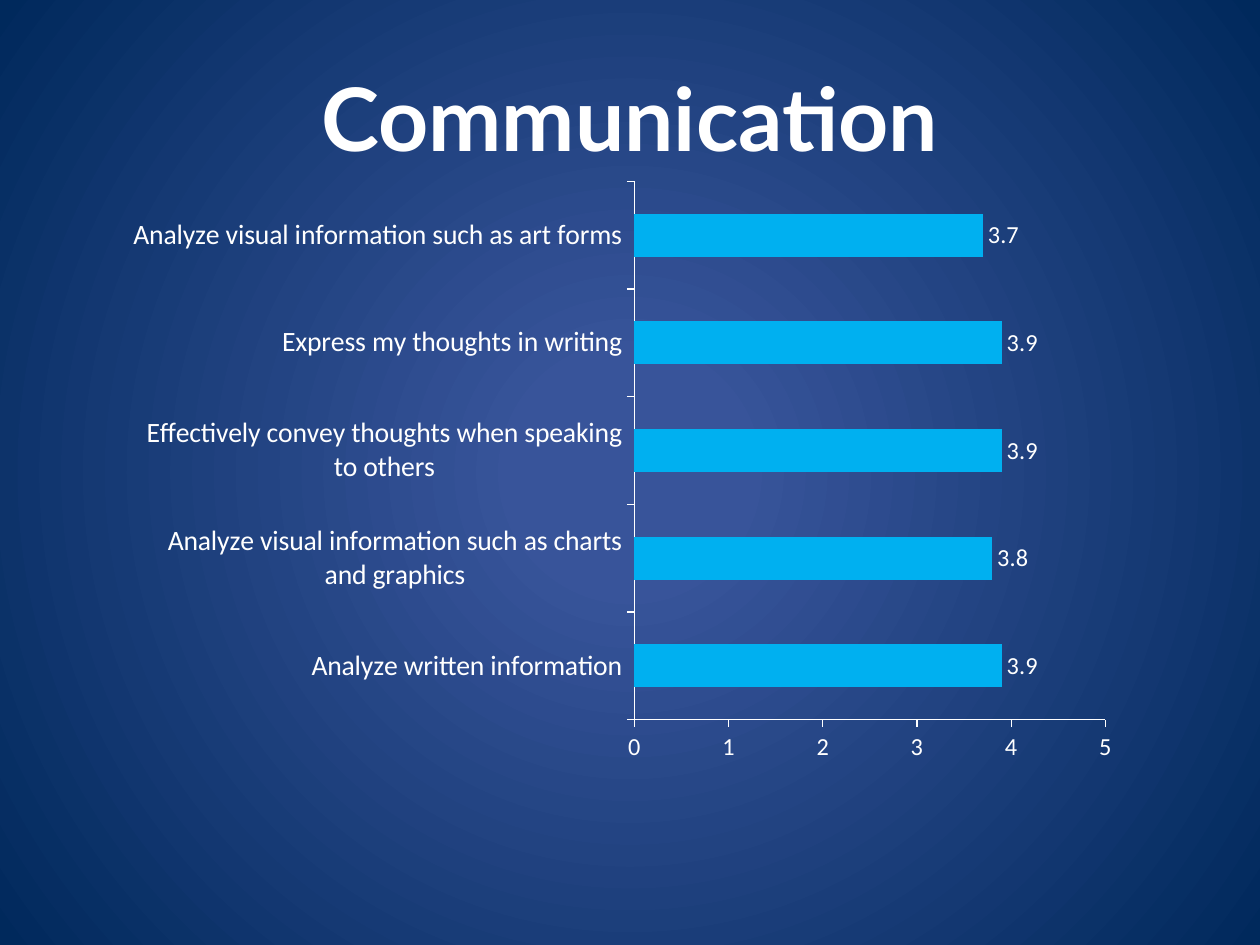
from dataclasses import dataclass

from lxml import etree
from pptx import Presentation
from pptx import util as u
from pptx.chart.data import CategoryChartData
from pptx.dml.color import RGBColor
from pptx.enum import chart as ch, text
from pptx.oxml import parse_xml
from pptx.oxml.ns import nsdecls, qn


@dataclass(frozen=True)
class Theme:
    ink: str = "FFFFFF"
    bar: str = "00B0F0"
    glow: str = "38549A"
    edge: str = "00295C"
    title_font: str = "Lato"
    chart_font: str = "Calibri"
    title_size: int = 50
    category_size: int = 16
    value_size: int = 14


theme = Theme()
ink = RGBColor.from_string(theme.ink)

scores = {
    "Analyze written information": 3.9,
    "Analyze visual information such as charts and graphics": 3.8,
    "Effectively convey thoughts when speaking to others": 3.9,
    "Express my thoughts in writing": 3.9,
    "Analyze visual information such as art forms": 3.7,
}


def style_font(font, size):
    font.size = u.Pt(size)
    font.color.rgb = ink


prs = Presentation()
prs.slide_width, prs.slide_height = u.Cm(25.4), u.Cm(19.05)
s = prs.slides.add_slide(prs.slide_layouts[5])

# Radial background
fill = s.background.fill
fill.gradient()
for stop, color, position in zip(fill.gradient_stops, (theme.glow, theme.edge), (0.14, 1)):
    stop.color.rgb = RGBColor.from_string(color)
    stop.position = position
grad = s.element.find(".//" + qn("a:gradFill"))
grad.replace(grad.find(qn("a:lin")), parse_xml(
    f'<a:path {nsdecls("a")} path="circle">'
    '<a:fillToRect l="50000" t="50000" r="50000" b="50000"/></a:path>'))

# Title
sp = s.shapes.title
sp.left, sp.top, sp.width, sp.height = u.Cm(1.27), u.Cm(0.76), u.Cm(22.86), u.Cm(3.18)
tf = sp.text_frame
tf.word_wrap = True
tf.vertical_anchor = text.MSO_ANCHOR.MIDDLE
p = tf.paragraphs[0]
p.alignment = text.PP_ALIGN.CENTER
r = p.add_run()
r.text = "Communication"
r.font.name = theme.title_font
r.font.bold = True
style_font(r.font, theme.title_size)

# Bar chart
data = CategoryChartData(number_format="0.0")
data.categories = list(scores)
data.add_series("Series 1", list(scores.values()))
chart = s.shapes.add_chart(
    ch.XL_CHART_TYPE.BAR_CLUSTERED,
    u.Cm(2.69), u.Cm(3), u.Cm(19.99), u.Cm(13.08), data).chart
chart.has_title = False
chart.has_legend = False
chart.font.name = theme.chart_font
style_font(chart.font, theme.value_size)

for axis, size in ((chart.category_axis, theme.category_size),
                   (chart.value_axis, theme.value_size)):
    axis.has_major_gridlines = False
    axis.major_tick_mark = ch.XL_TICK_MARK.OUTSIDE
    axis.minor_tick_mark = ch.XL_TICK_MARK.NONE
    axis.format.line.color.rgb = ink
    axis.format.line.width = u.Pt(0.75)
    style_font(axis.tick_labels.font, size)

axis = chart.value_axis
axis.minimum_scale, axis.maximum_scale, axis.major_unit = 0, 5, 1
axis.tick_labels.number_format = "0"
axis.tick_labels.number_format_is_linked = False

plot = chart.plots[0]
plot.gap_width = 150
plot.vary_by_categories = False
bars = plot.series[0]
bars.format.fill.solid()
bars.format.fill.fore_color.rgb = RGBColor.from_string(theme.bar)
labels = bars.data_labels
labels.show_value = True
labels.number_format = "0.0"
labels.number_format_is_linked = False
labels.position = ch.XL_LABEL_POSITION.OUTSIDE_END
style_font(labels.font, theme.value_size)

# Fixed inner plot area, as fractions of the chart frame
area = chart.element.find(".//" + qn("c:plotArea"))
for old in area.findall(qn("c:layout")):
    area.remove(old)
layout = parse_xml(f'<c:layout {nsdecls("c")}><c:manualLayout/></c:layout>')
for tag, value in (("layoutTarget", "inner"), ("xMode", "edge"), ("yMode", "edge"),
                   ("x", "0.5"), ("y", "0.05"), ("w", "0.48"), ("h", "0.83")):
    etree.SubElement(layout[0], qn("c:" + tag)).set("val", value)
area.insert(0, layout)

prs.save("out.pptx")
